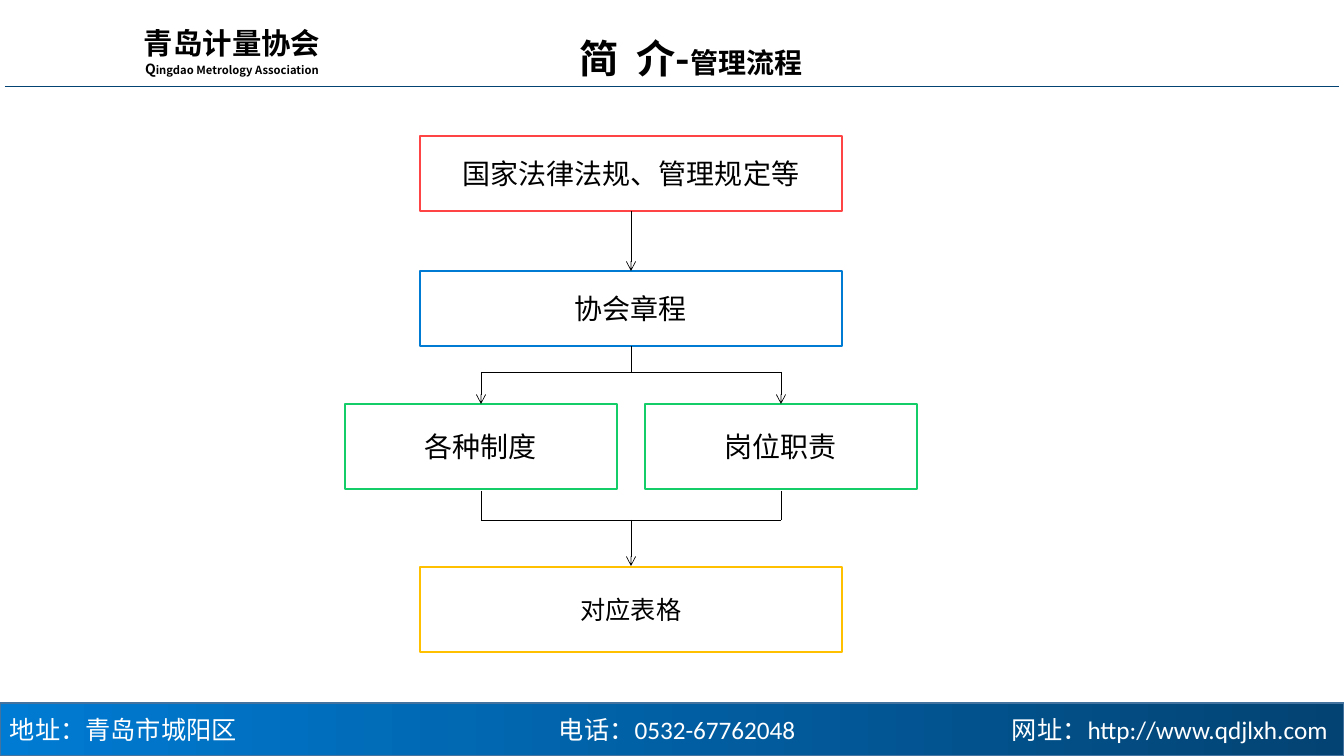
from lxml import etree
from pptx import Presentation
from pptx import util as u
from pptx.dml.color import RGBColor
from pptx.enum import shapes, text
from pptx.oxml.ns import qn

BLACK = RGBColor(0x00, 0x00, 0x00)
WHITE = RGBColor(0xFF, 0xFF, 0xFF)
NAVY = RGBColor(0x03, 0x43, 0x73)
BLUE = RGBColor(0x00, 0x7B, 0xD3)
STEEL = RGBColor(0x43, 0x73, 0x9E)
RED = RGBColor(0xFE, 0x44, 0x44)
GREEN = RGBColor(0x14, 0xCD, 0x68)
AMBER = RGBColor(0xFF, 0xC0, 0x00)
HEADING_FONT = "Noto Sans CJK SC"
BODY_FONT = "Calibri"
PX_PER_INCH = 100.8


def px(*lengths):
    return [u.Inches(length / PX_PER_INCH) for length in lengths]


def add_text(paragraph, content, size=20, color=BLACK, font=BODY_FONT,
             bold=False, spacing=0):
    run = paragraph.add_run()
    run.text = content
    run.font.name, run.font.size, run.font.bold = font, u.Pt(size), bold
    run.font.color.rgb = color
    properties = run.font._element
    etree.SubElement(properties, qn("a:ea"), typeface=HEADING_FONT)
    if spacing:
        properties.set("spc", str(spacing * 100))


class FlowSlide:
    def __init__(self, presentation):
        self.slide = presentation.slides.add_slide(presentation.slide_layouts[5])
        self.shapes = self.slide.shapes
        self.indent = u.Inches(0.39)

    def heading(self, paragraph, runs, line_spacing=1.0):
        paragraph.alignment = text.PP_ALIGN.CENTER
        paragraph.line_spacing = line_spacing
        properties = paragraph._p.get_or_add_pPr()
        properties.set("marL", "0")
        properties.set("indent", str(self.indent))
        for content, style in runs:
            add_text(paragraph, content, font=HEADING_FONT, bold=True, **style)

    def title(self, runs, left, top, width, height):
        title = self.shapes.title
        title.left, title.top, title.width, title.height = px(left, top, width, height)
        frame = title.text_frame
        frame.word_wrap = True
        frame.auto_size = text.MSO_AUTO_SIZE.NONE
        frame.vertical_anchor = text.MSO_ANCHOR.TOP
        self.heading(frame.paragraphs[0], runs, line_spacing=1.5)

    def association(self, lines, left, top, width, height):
        frame = self.shapes.add_textbox(*px(left, top, width, height)).text_frame
        frame.word_wrap = True
        for index, runs in enumerate(lines):
            paragraph = frame.add_paragraph() if index else frame.paragraphs[0]
            self.heading(paragraph, runs)

    def rectangle(self, left, top, width, height, outline):
        shape = self.shapes.add_shape(shapes.MSO_SHAPE.RECTANGLE,
                                      *px(left, top, width, height))
        shape.shadow.inherit = False
        shape.line.color.rgb = outline
        shape.line.width = u.Pt(1)
        shape.text_frame.word_wrap = True
        shape.text_frame.vertical_anchor = text.MSO_ANCHOR.MIDDLE
        return shape

    def box(self, content, center, top, width, height, outline, size=20):
        shape = self.rectangle(center - width // 2, top, width, height, outline)
        shape.fill.solid()
        shape.fill.fore_color.rgb = WHITE
        paragraph = shape.text_frame.paragraphs[0]
        paragraph.alignment = text.PP_ALIGN.CENTER
        add_text(paragraph, content, size=size)

    def footer(self, content, top, width, height, tabs):
        shape = self.rectangle(0, top, width, height, STEEL)
        shape.fill.gradient()
        shape.fill.gradient_angle = 0
        for stop, position, color in zip(shape.fill.gradient_stops, (0, 1), (BLUE, NAVY)):
            stop.position, stop.color.rgb = position, color
        shape.text_frame.margin_right = 0
        paragraph = shape.text_frame.paragraphs[0]
        paragraph.alignment = text.PP_ALIGN.LEFT
        tab_list = etree.SubElement(paragraph._p.get_or_add_pPr(), qn("a:tabLst"))
        for position in px(*tabs):
            etree.SubElement(tab_list, qn("a:tab"), pos=str(position), algn="l")
        add_text(paragraph, content, size=18, color=WHITE)

    def line(self, x1, y1, x2, y2, color=BLACK, arrow=False):
        connector = self.shapes.add_connector(shapes.MSO_CONNECTOR.STRAIGHT,
                                              *px(x1, y1, x2, y2))
        connector.line.color.rgb = color
        connector.line.width = u.Pt(0.5)
        if arrow:
            etree.SubElement(connector.line._get_or_add_ln(), qn("a:tailEnd"), type="arrow")
        etree.SubElement(connector._element.spPr, qn("a:effectLst"))


def main():
    presentation = Presentation()
    presentation.slide_width, presentation.slide_height = px(1344, 756)
    flow = FlowSlide(presentation)

    # Footer and header
    flow.footer("地址：青岛市城阳区\t电话：0532-67762048\t网址：http://www.qdjlxh.com",
                703, 1344, 53, tabs=(549, 1002))
    flow.line(5, 86, 1339, 86, color=NAVY)
    flow.title([("简", {"size": 28}), (" ", {"size": 28, "spacing": 6}),
                ("介-", {"size": 28}), ("管理流程", {"size": 20})],
               420, 6, 503, 82)
    flow.association([[("青岛计量协会", {"size": 21})],
                      [("Q", {"size": 10}),
                       ("ingdao Metrology Association", {"size": 8})]],
                     71, 20, 283, 62)

    # Flow boxes
    left, middle, right = 481, 631, 781
    wide, narrow = 422, 272
    flow.box("国家法律法规、管理规定等", middle, 136, wide, 75, RED)
    flow.box("协会章程", middle, 271, wide, 75, BLUE)
    flow.box("各种制度", left, 404, narrow, 85, GREEN)
    flow.box("岗位职责", right, 404, narrow, 85, GREEN)
    flow.box("对应表格", middle, 567, wide, 85, AMBER, size=18)

    # Connecting lines
    split, merge = 372, 520
    flow.line(middle, 211, middle, 271, arrow=True)
    flow.line(middle, 346, middle, split)
    flow.line(middle, merge, middle, 566, arrow=True)
    for level in (split, merge):
        flow.line(left, level, right, level)
    for branch in (left, right):
        flow.line(branch, split, branch, 404, arrow=True)
        flow.line(branch, 491, branch, merge)

    presentation.save("out.pptx")


if __name__ == "__main__":
    main()
